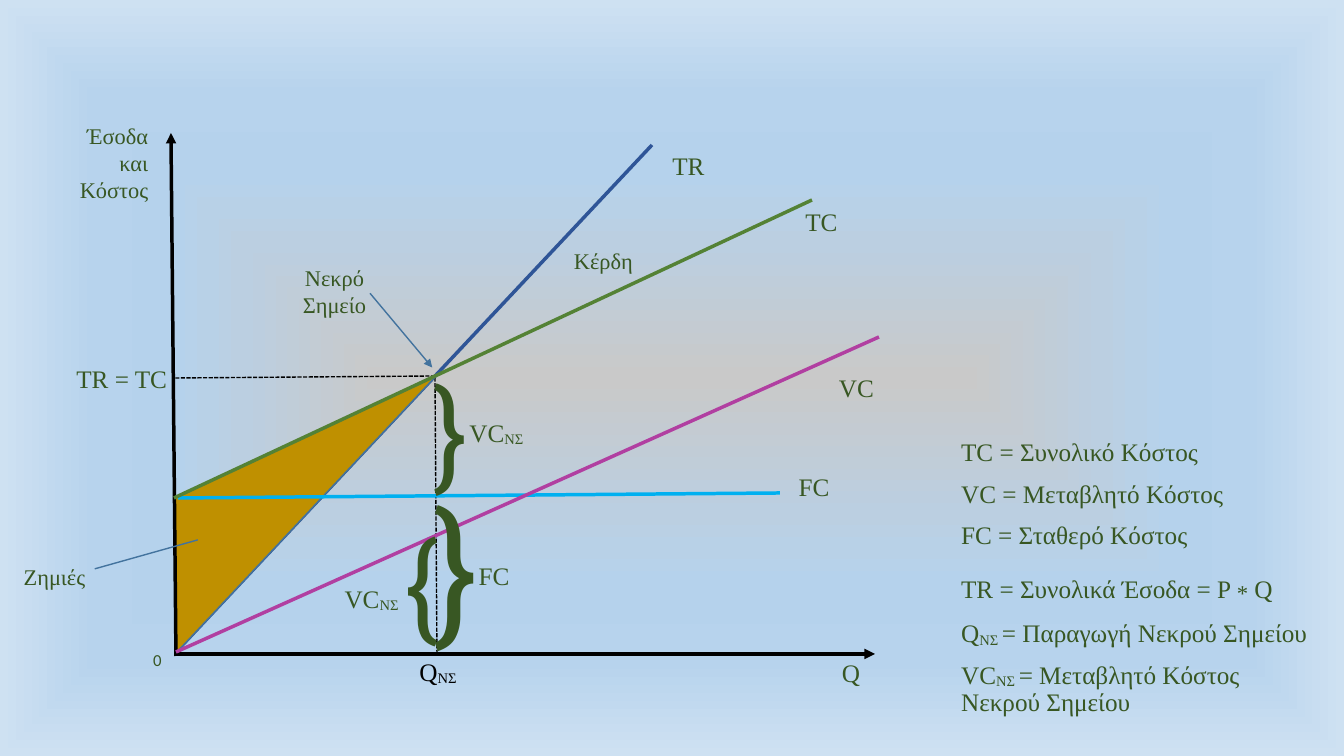
from dataclasses import dataclass

from pptx import Presentation
from pptx.dml.color import RGBColor
from pptx.enum.dml import MSO_LINE
from pptx.enum.shapes import MSO_CONNECTOR, MSO_SHAPE
from pptx.enum.text import MSO_ANCHOR, PP_ALIGN
from pptx.oxml import parse_xml
from pptx.oxml.ns import nsdecls, qn
from pptx.util import Pt

PX = 12192000 / 1344
SLIDE = (1344, 756)


@dataclass(frozen=True)
class Theme:
    """Colours, fonts and type sizes of the slide."""
    text: str = "385723"
    black: str = "000000"
    revenue: str = "2F5597"
    total: str = "548235"
    variable: str = "B13FA1"
    fixed: str = "00B0F0"
    loss: str = "BF9000"
    outline: str = "43739E"
    serif: str = "Times New Roman"
    sans: str = "Calibri"
    brace: str = "Roboto Condensed"
    label: int = 18
    note: int = 16
    zero: int = 12
    star: int = 28
    thick: float = 2.5
    thin: int = 1
    backdrop: tuple = ((0, "C9C9C9"), (36, "BBCFE1"), (45, "B8D1E7"), (54, "B5D2EC"),
                       (65, "B5D2EC"), (75, "B7D3ED"), (100, "CEE1F2"))


T = Theme()


def emu(*lengths):
    """Turn px lengths into EMU."""
    return [round(n * PX) for n in lengths]


def apply(obj, **fmt):
    """Set each format value on an object."""
    for name, value in fmt.items():
        setattr(obj, name, value)


def write(tf, paragraphs, size=T.label, font=T.serif, color=T.text, **fmt):
    """Fill a text frame; text between underscores is subscript."""
    tf.word_wrap = True
    for i, text in enumerate(paragraphs):
        p = tf.add_paragraph() if i else tf.paragraphs[0]
        apply(p, **fmt)
        for j, part in enumerate(text.split("_")):
            for k, line in enumerate(part.split("\v")):
                if k:
                    p.add_line_break()
                r = p.add_run()
                r.text = line
                apply(r.font, name=font, size=Pt(T.star if line == "*" else size))
                r.font.color.rgb = RGBColor.from_string(color)
                if j % 2:
                    r.font._element.set("baseline", "-10000")


def stroke(sp, color, width, dash=None, arrow=False):
    """Format the line of a shape or connector."""
    sp.line.color.rgb = RGBColor.from_string(color)
    apply(sp.line, width=Pt(width), dash_style=dash)
    if arrow:
        sp.get_or_add_ln().append(parse_xml(f'<a:tailEnd {nsdecls("a")} type="triangle"/>'))


def backdrop(s):
    """Paint the gradient background."""
    s.background.fill.gradient()
    grad = s._element.find(".//" + qn("a:gradFill"))
    stops = "".join(f'<a:gs pos="{pos * 1000}"><a:srgbClr val="{color}"/></a:gs>'
                    for pos, color in T.backdrop)
    grad.getparent().replace(grad, parse_xml(
        f'<a:gradFill {nsdecls("a")} rotWithShape="1"><a:gsLst>{stops}</a:gsLst>'
        '<a:path path="shape"><a:fillToRect l="50000" t="50000" r="50000" b="50000"/>'
        '</a:path></a:gradFill>'))


def curves(shapes, box, lines):
    """Draw straight lines, measured from the corner of the box."""
    x, y = box[:2]
    for x1, y1, x2, y2, fmt in lines:
        c = shapes.add_connector(MSO_CONNECTOR.STRAIGHT,
                                 *emu(x + x1, y + y1, x + x2, y + y2))
        c._element.spPr.append(parse_xml(f'<a:effectLst {nsdecls("a")}/>'))
        stroke(c, **fmt)


def loss_area(shapes, box):
    """Draw the filled loss triangle."""
    x, y = box[:2]
    start, *rest = [emu(x + dx, y + dy) for dx, dy in ((0, 365), (261, 243), (1, 520))]
    fb = shapes.build_freeform(*start)
    fb.add_line_segments(rest, close=True)
    sp = fb.convert_to_shape()
    sp.shadow.inherit = False
    sp.fill.solid()
    sp.fill.fore_color.rgb = RGBColor.from_string(T.loss)
    stroke(sp, T.outline, T.thin)


def labels(shapes, box):
    """Place the labels and braces of the diagram."""
    x, y = box[:2]
    note = dict(size=T.note)
    right = dict(alignment=PP_ALIGN.RIGHT)
    brace = dict(font=T.brace, alignment=PP_ALIGN.LEFT)
    for left, top, w, h, text, fmt in (
            (480, 12, 67, 44, "TR", {}),
            (613, 68, 67, 44, "TC", {}),
            (648, 234, 67, 44, "VC", {}),
            (603, 333, 72, 55, "FC", {}),
            (648, 519, 56, 52, "Q", {}),
            (217, 518, 92, 52, "Q_ΝΣ_", dict(color=T.black)),
            (-45, 512, 55, 28, "0", dict(size=T.zero, font=T.sans)),
            (-111, -16, 94, 116, "Έσοδα\nκαι\nΚόστος", note | right),
            (-118, 225, 120, 44, "TR = TC", right),
            (389, 109, 81, 37, "Κέρδη", note | dict(alignment=PP_ALIGN.LEFT)),
            (248, 334, 46, 197, "}", brace | dict(size=109)),
            (248, 220, 46, 152, "}", brace | dict(size=84)),
            (228, 395, 46, 149, "}", brace | dict(size=82, rotation=180)),
            (283, 422, 72, 55, "FC", {}),
            (276, 279, 91, 55, "VC_ΝΣ_", {}),
            (151, 445, 91, 55, "VC_ΝΣ_", {})):
        sp = shapes.add_textbox(*emu(x + left, y + top, w, h))
        fmt = dict(alignment=PP_ALIGN.CENTER) | fmt
        sp.rotation = fmt.pop("rotation", 0)
        write(sp.text_frame, text.split("\n"), **fmt)


def callouts(shapes, box):
    """Place the break-even and loss callouts."""
    x, y = box[:2]
    for left, top, w, h, text, anchors, arrow in (
            (96, 100, 127, 116, "Νεκρό Σημείο", (0.52, 0.78, 1.16, 1.27), True),
            (-201, 386, 161, 116, "Ζημιές", (0.43, 0.75, 0.18, 1.39), False)):
        sp = shapes.add_shape(MSO_SHAPE.LINE_CALLOUT_1_NO_BORDER,
                              *emu(x + left, y + top, w, h))
        for i, value in enumerate(anchors):
            sp.adjustments[i] = value
        sp.shadow.inherit = False
        sp.fill.background()
        stroke(sp, T.outline, T.thin, arrow=arrow)
        sp.text_frame.vertical_anchor = MSO_ANCHOR.MIDDLE
        write(sp.text_frame, [text], size=T.note, alignment=PP_ALIGN.CENTER)


def diagram(s, box):
    """Draw the break-even diagram; the box spans its two axes."""
    shapes = s.shapes.add_group_shape().shapes
    w, h = box[2:]
    guide = dict(color=T.black, width=T.thin, dash=MSO_LINE.SQUARE_DOT)
    axis = dict(color=T.black, width=T.thick, arrow=True)
    curves(shapes, box, (
        (1, 519, 477, 12, dict(color=T.revenue, width=T.thick)),
        (262, h, 260, 243, guide),
        (260, 243, -2, 245, guide)))
    loss_area(shapes, box)
    curves(shapes, box, (
        (3, 365, 605, 360, dict(color=T.fixed, width=T.thick)),
        (0, h, w, h, axis),
        (1, h + 2, -4, 0, axis),
        (1, 519, 704, 204, dict(color=T.variable, width=T.thick)),
        (-1, 365, 637, 67, dict(color=T.total, width=T.thick))))
    callouts(shapes, box)
    labels(shapes, box)


def legend(s, box):
    """Write the list of abbreviations in the body placeholder."""
    sp = s.placeholders[1]
    apply(sp, **dict(zip(("left", "top", "width", "height"), emu(*box))))
    tf = sp.text_frame
    write(tf, ("TC = Συνολικό Κόστος", "VC = Μεταβλητό Κόστος", "FC = Σταθερό Κόστος",
               "TR = Συνολικά Έσοδα = P _*_ Q", "Q_ΝΣ _= Παραγωγή Νεκρού Σημείου",
               "VC_ΝΣ _= Μεταβλητό Κόστος\vΝεκρού Σημείου"),
          line_spacing=0.9, space_before=Pt(10))
    for p in tf.paragraphs:
        pPr = p._p.get_or_add_pPr()
        pPr.set("marL", "0")
        pPr.set("indent", "0")
        pPr.append(parse_xml(f'<a:buNone {nsdecls("a")}/>'))


def main():
    """Build and save the slide."""
    prs = Presentation()
    prs.slide_width, prs.slide_height = emu(*SLIDE)
    s = prs.slides.add_slide(prs.slide_layouts[1])
    title = s.shapes.title._element
    title.getparent().remove(title)
    backdrop(s)
    legend(s, (951, 435, 381, 282))
    diagram(s, (175, 133, 700, 521))
    prs.save("out.pptx")


if __name__ == "__main__":
    main()
